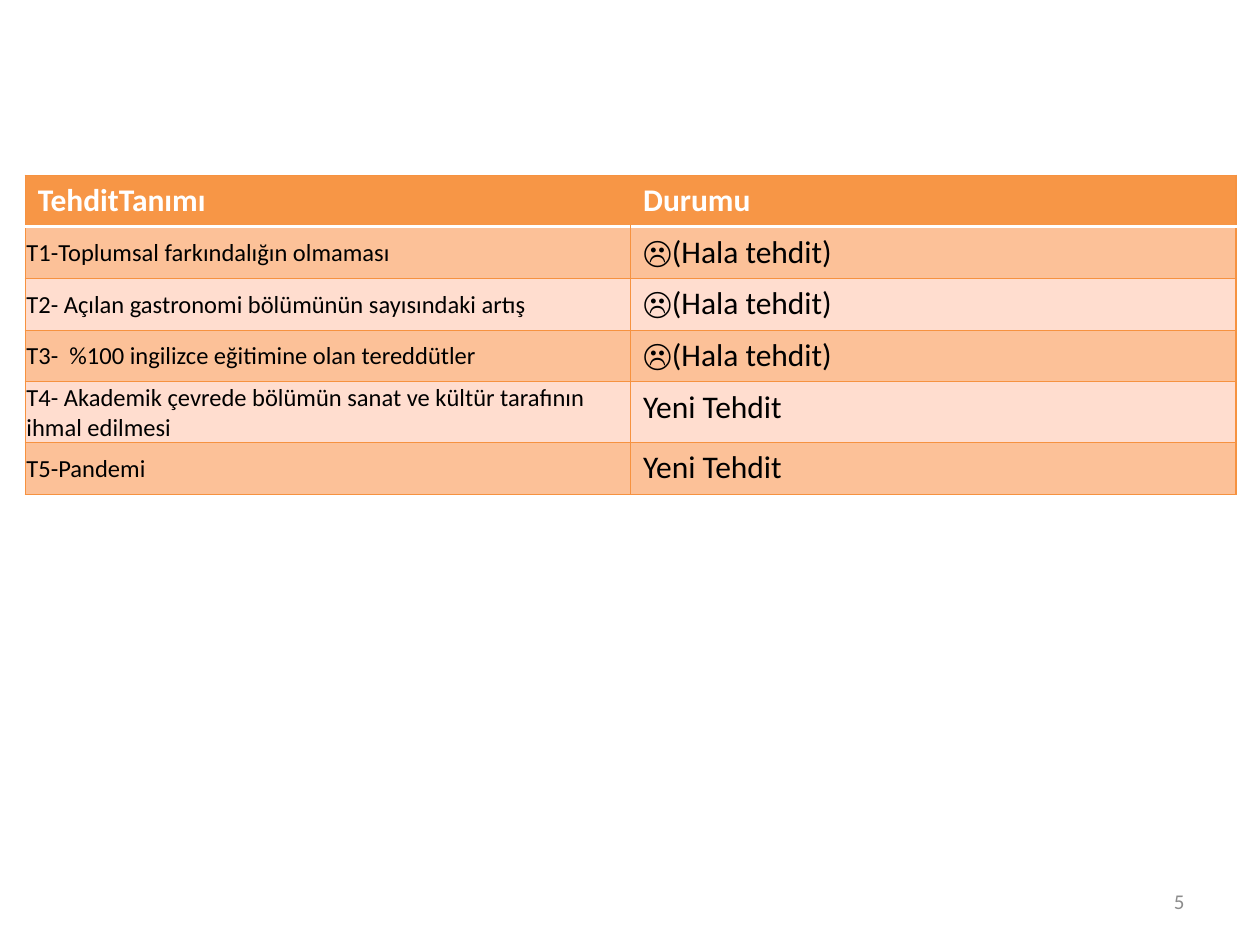
from dataclasses import dataclass

from lxml import etree
from pptx import Presentation
from pptx.dml.color import RGBColor
from pptx.enum.text import MSO_ANCHOR, PP_ALIGN
from pptx.oxml.ns import qn
from pptx.util import Inches, Pt

TOP, MIDDLE = MSO_ANCHOR.TOP, MSO_ANCHOR.MIDDLE
LEFT, RIGHT = PP_ALIGN.LEFT, PP_ALIGN.RIGHT
BLANK_LAYOUT = 6


@dataclass(frozen=True)
class Theme:
    font: str = "Calibri"
    header: str = "F79646"
    bands: tuple = ("FCC198", "FFDDCF")
    line: str = "F69240"
    white: str = "FFFFFF"
    black: str = "000000"
    muted: str = "8C8C8C"
    large: int = 18
    body: int = 14
    small: int = 12
    thin: float = 0.75
    thick: float = 2


THEME = Theme()

HEADERS = ("TehditTanımı", "Durumu")
STILL_THREAT = "☹(Hala tehdit)"
NEW_THREAT = "Yeni Tehdit"
THREATS = (
    ("T1-Toplumsal farkındalığın olmaması", STILL_THREAT),
    ("T2- Açılan gastronomi bölümünün sayısındaki artış", STILL_THREAT),
    ("T3-  %100 ingilizce eğitimine olan tereddütler", STILL_THREAT),
    ("T4- Akademik çevrede bölümün sanat ve kültür tarafının ihmal edilmesi",
     NEW_THREAT),
    ("T5-Pandemi", NEW_THREAT),
)
ROW_HEIGHTS = (0.41, 0.41, 0.41, 0.41, 0.48, 0.41)
TIGHT_MARGINS = {"margin_left": Inches(0.01), "margin_right": Inches(0.01),
                 "margin_top": Inches(0.01), "margin_bottom": 0}


def set_values(target, values):
    for name, value in values.items():
        setattr(target, name, value)


def write_text(frame, text, size, color, bold=False, align=LEFT):
    para = frame.paragraphs[0]
    para.alignment = align
    span = para.add_run()
    span.text = text
    set_values(span.font, {"name": THEME.font, "size": Pt(size), "bold": bold})
    span.font.color.rgb = RGBColor.from_string(color)


def set_borders(cell, **special):
    """Draw thin lines on every side, except for sides given in special."""
    properties = cell._tc.get_or_add_tcPr()
    for side in "LRTB":
        color, width = special.get(side, (THEME.line, THEME.thin))
        line = etree.SubElement(properties, qn(f"a:ln{side}"), w=str(Pt(width)))
        fill = etree.SubElement(line, qn("a:solidFill"))
        etree.SubElement(fill, qn("a:srgbClr"), val=color)


def fill_cell(cell, color):
    cell.fill.solid()
    cell.fill.fore_color.rgb = RGBColor.from_string(color)


def add_threat_table(page, left, top, width, height):
    rows = (HEADERS, *THREATS)
    table = page.shapes.add_table(len(rows), len(HEADERS),
                                  left, top, width, height).table
    for column in table.columns:
        column.width = width // len(HEADERS)
    for row, row_height in zip(table.rows, ROW_HEIGHTS):
        row.height = Inches(row_height)

    divider = (THEME.white, THEME.thick)
    hidden = (THEME.header, THEME.thin)

    # Header row
    for index, text in enumerate(HEADERS):
        cell = table.cell(0, index)
        inner_side = "R" if index == 0 else "L"
        set_borders(cell, B=divider, **{inner_side: hidden})
        fill_cell(cell, THEME.header)
        write_text(cell.text_frame, text, THEME.large, THEME.white, bold=True)

    # Banded threat rows
    for number, texts in enumerate(THREATS, start=1):
        for index, text in enumerate(texts):
            cell = table.cell(number, index)
            is_threat = index == 0
            set_borders(cell, **({"T": divider} if number == 1 else {}))
            fill_cell(cell, THEME.bands[(number - 1) % 2])
            cell.vertical_anchor = MIDDLE if is_threat else TOP
            if is_threat:
                set_values(cell, TIGHT_MARGINS)
            write_text(cell.text_frame, text,
                       THEME.body if is_threat else THEME.large, THEME.black)


def add_page_number(page, text, left, top, width, height):
    box = page.shapes.add_textbox(left, top, width, height)
    set_values(box.text_frame, {"word_wrap": True, "vertical_anchor": MIDDLE})
    write_text(box.text_frame, text, THEME.small, THEME.muted, align=RIGHT)


def main():
    deck = Presentation()
    set_values(deck, {"slide_width": Inches(10), "slide_height": Inches(7.5)})
    page = deck.slides.add_slide(deck.slide_layouts[BLANK_LAYOUT])
    add_threat_table(page, Inches(0.2), Inches(1.39),
                     Inches(9.61), Inches(sum(ROW_HEIGHTS)))
    add_page_number(page, "5", Inches(7.17), Inches(6.95),
                    Inches(2.33), Inches(0.4))
    deck.save("out.pptx")


if __name__ == "__main__":
    main()
